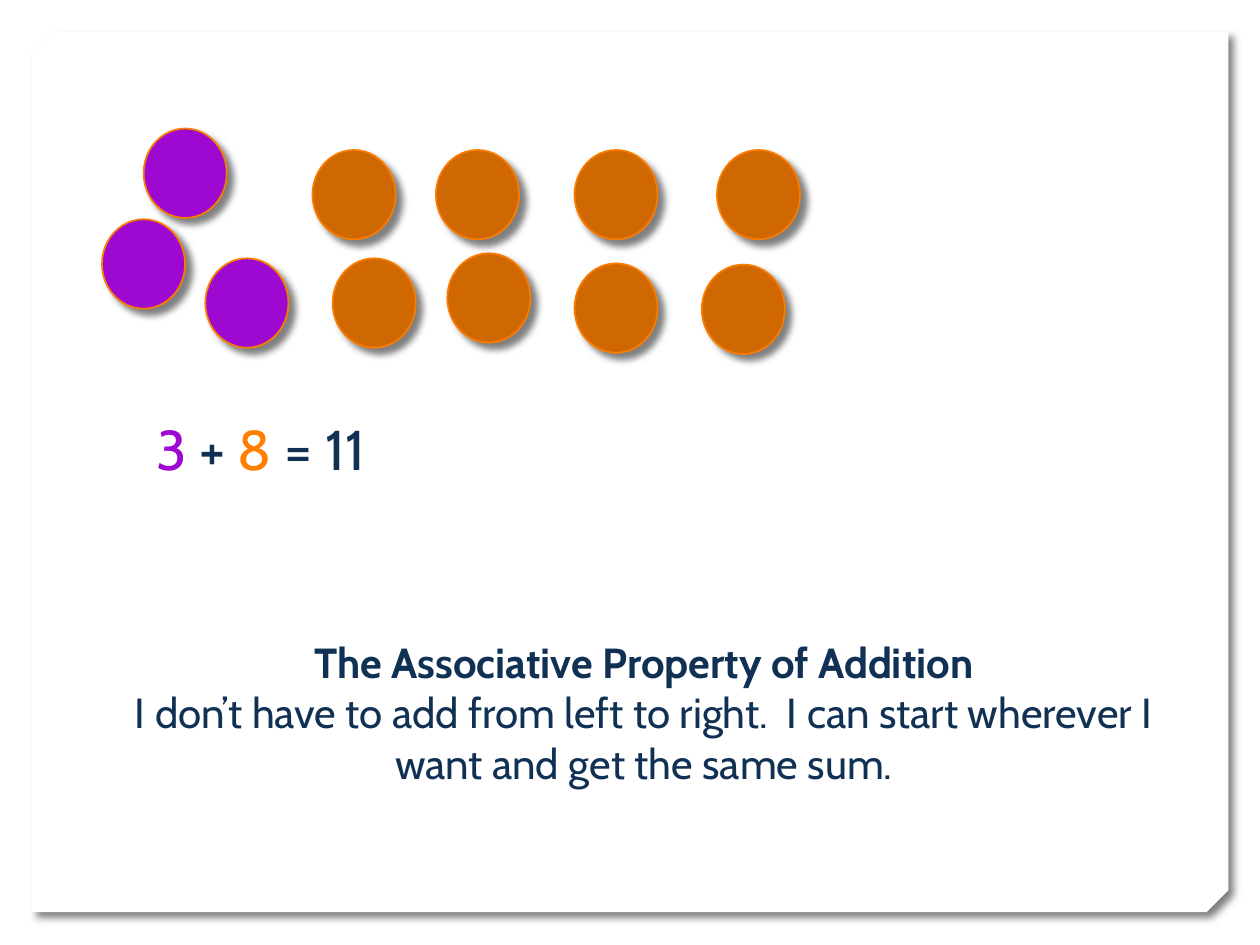
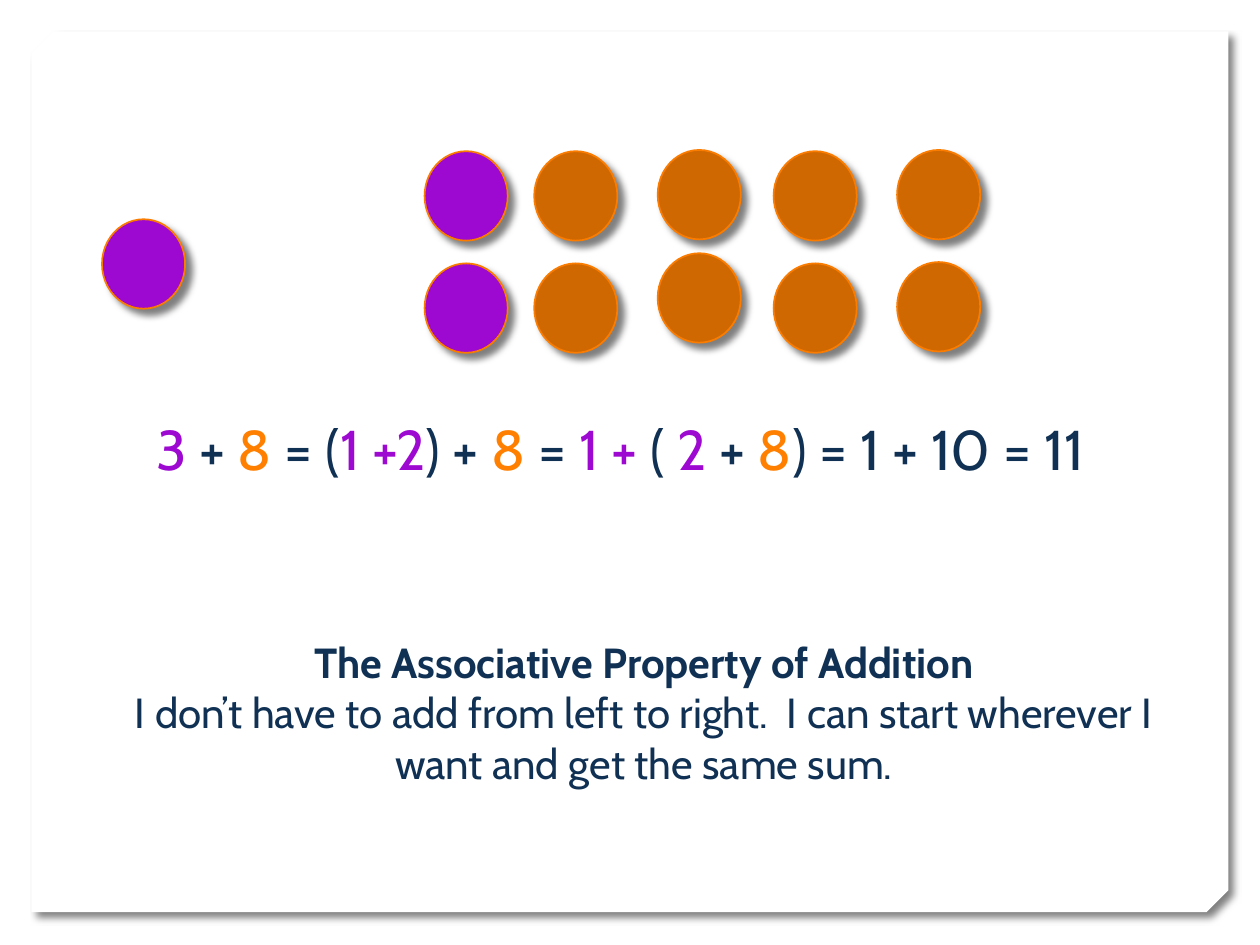
from lxml.etree import SubElement
from pptx import Presentation
from pptx.dml.color import RGBColor
from pptx.enum.shapes import MSO_SHAPE
from pptx.enum.text import MSO_AUTO_SIZE, PP_ALIGN
from pptx.oxml.ns import qn
from pptx.util import Inches, Pt

# Content
PURPLE, ORANGE, NAVY = "9D09D1", "FF7F01", "103154"
COUNTER_ORANGE, COUNTER_EDGE, WHITE = "D06801", "FA7C00", "FFFFFF"
FONT = "Cabin"
COUNTER_SIZE = (0.66, 0.71)
FRAME_BOX = (0.25, 0.25, 9.5, 6.99)
EQUATION_BOX = (1.14, 3.24, 8.1, 0.94)
PROPERTY_BOX = (0.81, 5, 8.6, 1.31)

PROPERTY = [
    [("The Associative Property of Addition", NAVY, True)],
    [("I don’t have to add from left to right.  I can start wherever I want "
      "and get the same sum.", NAVY, False)],
]

# Each slide: left and top of its counters by colour, then its equation
SLIDES = [
    {
        "counters": {
            PURPLE: [(1.14, 1.02), (0.81, 1.74), (1.63, 2.05)],
            COUNTER_ORANGE: [(2.48, 1.19), (3.46, 1.19), (4.56, 1.19), (5.69, 1.19),
                             (2.64, 2.05), (3.55, 2.01), (4.56, 2.09), (5.57, 2.1)],
        },
        "equation": [("3", PURPLE), (" + ", NAVY), ("8", ORANGE), (" = 11", NAVY)],
    },
    {
        "counters": {
            PURPLE: [(0.81, 1.74), (3.37, 1.2), (3.37, 2.09)],
            COUNTER_ORANGE: [(4.24, 1.2), (5.22, 1.19), (6.14, 1.2), (7.12, 1.19),
                             (4.24, 2.09), (5.22, 2.01), (6.14, 2.09), (7.12, 2.08)],
        },
        "equation": [("3", PURPLE), (" + ", NAVY), ("8", ORANGE), (" = (", NAVY),
                     ("1 +2", PURPLE), (") + ", NAVY), ("8", ORANGE), (" = ", NAVY),
                     ("1 + ", PURPLE), ("(", NAVY), (" 2 ", PURPLE), ("+ ", NAVY),
                     ("8", ORANGE), (") = 1 + 10 = 11", NAVY)],
    },
]


def color(hex_code):
    return RGBColor.from_string(hex_code)


def add_shadowed(slide, preset, box, fill):
    """Add a filled preset shape with the deck's soft lower-right shadow."""
    shape = slide.shapes.add_shape(preset, *map(Inches, box))
    shape.fill.solid()
    shape.fill.fore_color.rgb = color(fill)
    shape.shadow.inherit = False
    effects = shape.element.spPr.find(qn("a:effectLst"))
    shadow = SubElement(effects, qn("a:outerShdw"), blurRad=str(Pt(4)), dist=str(Pt(5)),
                        dir=str(45 * 60000), algn="tl", rotWithShape="0")
    black = SubElement(shadow, qn("a:srgbClr"), val="000000")
    SubElement(black, qn("a:alpha"), val="50000")
    return shape


def add_frame(slide):
    """Draw the snipped page frame and place it on the shared layout."""
    frame = add_shadowed(slide, MSO_SHAPE.SNIP_2_DIAG_RECTANGLE, FRAME_BOX, WHITE)
    frame.adjustments[0], frame.adjustments[1] = 0, 0.025
    frame.line.fill.background()
    frame.element.spPr.find(qn("a:xfrm")).set("flipV", "1")
    slide.slide_layout.shapes.element.append(frame.element)


def add_counter(slide, left, top, fill):
    counter = add_shadowed(slide, MSO_SHAPE.OVAL, (left, top, *COUNTER_SIZE), fill)
    counter.line.color.rgb = color(COUNTER_EDGE)
    counter.line.width = Pt(1)


def add_text(slide, box, paragraphs, size, align):
    frame = slide.shapes.add_textbox(*map(Inches, box)).text_frame
    frame.word_wrap = True
    frame.auto_size = MSO_AUTO_SIZE.SHAPE_TO_FIT_TEXT
    for number, parts in enumerate(paragraphs):
        paragraph = frame.add_paragraph() if number else frame.paragraphs[0]
        paragraph.alignment = align
        for words, hex_code, bold in parts:
            run = paragraph.add_run()
            run.text = words
            run.font.color.rgb = color(hex_code)
            for name, value in {"name": FONT, "size": Pt(size), "bold": bold}.items():
                setattr(run.font, name, value)


def main():
    deck = Presentation()
    deck.slide_width, deck.slide_height = Inches(10), Inches(7.5)
    blank = deck.slide_layouts[6]
    for number, content in enumerate(SLIDES):
        slide = deck.slides.add_slide(blank)
        if number == 0:
            add_frame(slide)
        # Counters
        for fill, places in content["counters"].items():
            for left, top in places:
                add_counter(slide, left, top, fill)
        # Equation and the property it shows
        equation = [(words, hex_code, False) for words, hex_code in content["equation"]]
        add_text(slide, EQUATION_BOX, [equation], 32, PP_ALIGN.LEFT)
        add_text(slide, PROPERTY_BOX, PROPERTY, 24, PP_ALIGN.CENTER)
    deck.save("out.pptx")


if __name__ == "__main__":
    main()
